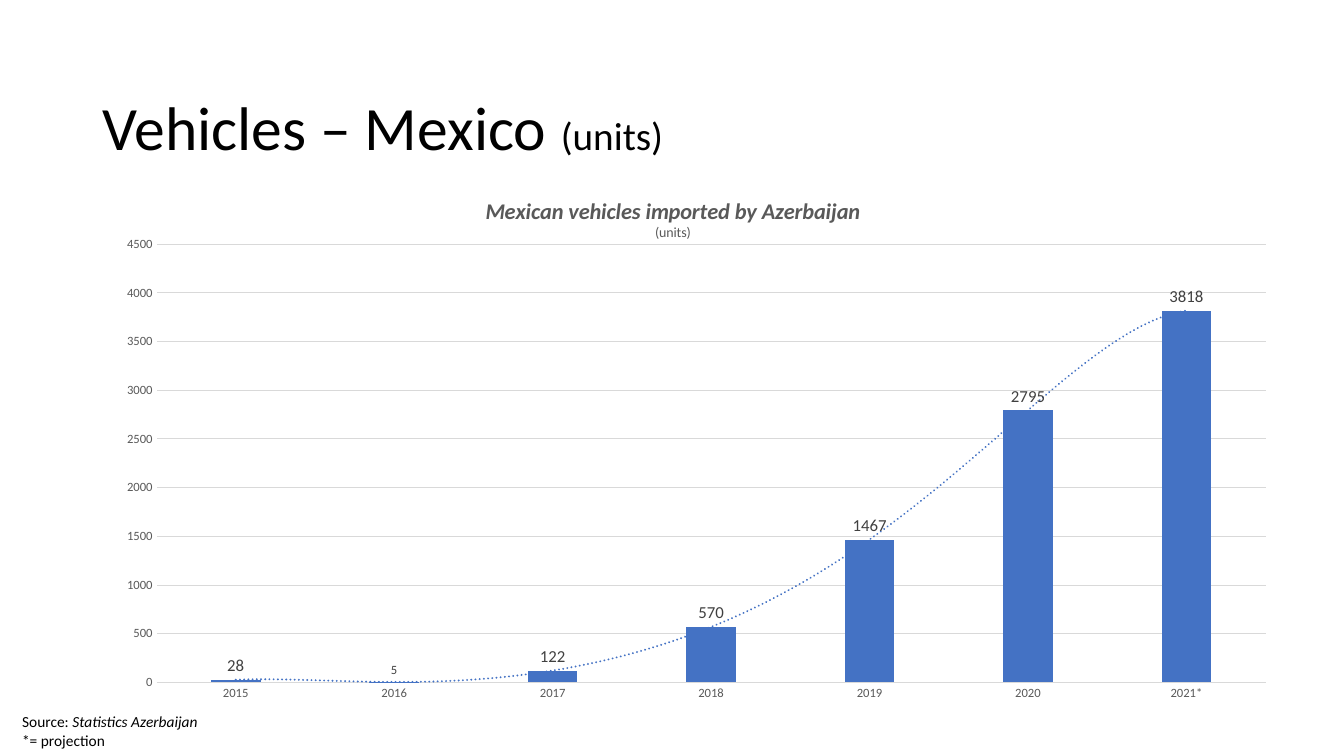
from lxml import etree
from pptx import Presentation
from pptx.chart.data import CategoryChartData
from pptx.dml.color import RGBColor
from pptx.enum.chart import XL_CHART_TYPE as ChartType, XL_LABEL_POSITION as LabelPosition
from pptx.enum.chart import XL_TICK_MARK as TickMark
from pptx.enum.text import MSO_ANCHOR as Anchor
from pptx.oxml import parse_xml
from pptx.oxml.ns import nsdecls, qn
from pptx.util import Inches, Pt

IMPORTS = {"2015": 28, "2016": 5, "2017": 122, "2018": 570,
           "2019": 1467, "2020": 2795, "2021*": 3818}


def color(hex_string):
    return RGBColor.from_string(hex_string)


def set_layout(parent, index, **values):
    """Give a chart element a manual layout, as fractions of the chart."""
    for old in parent.findall(qn("c:layout")):
        parent.remove(old)
    layout = parse_xml(f"<c:layout {nsdecls('c')}><c:manualLayout/></c:layout>")
    for tag, value in values.items():
        etree.SubElement(layout[0], qn(f"c:{tag}")).set("val", str(value))
    parent.insert(index, layout)


class SlideBuilder:
    font_name = "Calibri"
    ink, gray, label_gray, grid, blue = "000000", "595959", "404040", "D9D9D9", "4472C4"

    def __init__(self, slide):
        self.slide = slide

    def style(self, font, size, hex_color, bold=False, italic=False):
        font.name, font.size = self.font_name, Pt(size)
        font.bold, font.italic = bold, italic
        font.color.rgb = color(hex_color)

    def add_runs(self, paragraph, pieces, hex_color):
        """Add runs given as (text, size, bold, italic)."""
        for text, size, bold, italic in pieces:
            run = paragraph.add_run()
            run.text = text
            self.style(run.font, size, hex_color, bold, italic)

    def text(self, left, top, width, height, lines, anchor=Anchor.TOP, spacing=1.0):
        box = self.slide.shapes.add_textbox(
            Inches(left), Inches(top), Inches(width), Inches(height))
        frame = box.text_frame
        frame.word_wrap = True
        frame.vertical_anchor = anchor
        for number, pieces in enumerate(lines):
            paragraph = frame.add_paragraph() if number else frame.paragraphs[0]
            paragraph.line_spacing = spacing
            self.add_runs(paragraph, pieces, self.ink)

    def column_chart(self, left, top, width, height, values, title_lines):
        data = CategoryChartData()
        data.categories = list(values)
        data.add_series("Series 1", list(values.values()))
        chart = self.slide.shapes.add_chart(
            ChartType.COLUMN_CLUSTERED, Inches(left), Inches(top),
            Inches(width), Inches(height), data).chart
        self.style(chart.font, 10, self.ink)
        chart.has_legend = False
        self.chart_title(chart, title_lines)
        self.axes(chart)
        plot = chart.plots[0]
        plot.gap_width, plot.overlap, plot.vary_by_categories = 219, -27, False
        plot_area = chart._chartSpace.chart.plotArea
        set_layout(plot_area, 0, layoutTarget="inner", xMode="edge", yMode="edge",
                   x=0.092, y=0.135, w=0.878, h=0.813)
        return plot.series[0]

    def chart_title(self, chart, lines):
        frame = chart.chart_title.text_frame
        for number, pieces in enumerate(lines):
            paragraph = frame.add_paragraph() if number else frame.paragraphs[0]
            self.add_runs(paragraph, pieces, self.gray)
        set_layout(chart.chart_title._element, 1, xMode="edge", yMode="edge",
                   x=0.35, y=0.04)

    def axes(self, chart):
        category, value = chart.category_axis, chart.value_axis
        for axis in (category, value):
            axis.major_tick_mark = axis.minor_tick_mark = TickMark.NONE
            self.style(axis.tick_labels.font, 9, self.gray)
        value.minimum_scale, value.maximum_scale, value.major_unit = 0, 4500, 500
        value.format.line.fill.background()
        for line in (category.format.line, value.major_gridlines.format.line):
            line.color.rgb = color(self.grid)
            line.width = Pt(0.75)

    def label_columns(self, series, small_points):
        """Fill the columns and label them, larger outside small_points."""
        series.format.fill.solid()
        series.format.fill.fore_color.rgb = color(self.blue)
        labels = series.data_labels
        labels.show_value = True
        labels.position = LabelPosition.OUTSIDE_END
        self.style(labels.font, 9, self.label_gray)
        for number in range(len(series.values)):
            if number not in small_points:
                label = series.points[number].data_label
                self.style(label.font, 12, self.label_gray)
                label.position = LabelPosition.OUTSIDE_END

    def trend(self, series, order):
        trendline = parse_xml(
            f'<c:trendline {nsdecls("c", "a")}><c:spPr><a:ln w="{Pt(1.5)}" cap="rnd">'
            f'<a:solidFill><a:srgbClr val="{self.blue}"/></a:solidFill>'
            '<a:prstDash val="sysDot"/></a:ln></c:spPr>'
            f'<c:trendlineType val="poly"/><c:order val="{order}"/>'
            '<c:dispRSqr val="0"/><c:dispEq val="0"/></c:trendline>')
        series._element.find(qn("c:cat")).addprevious(trendline)


def main():
    presentation = Presentation()
    presentation.slide_width, presentation.slide_height = Inches(13.33), Inches(7.5)
    builder = SlideBuilder(presentation.slides.add_slide(presentation.slide_layouts[6]))
    builder.text(0.92, 0.73, 11.5, 1.12,
                 [[("Vehicles – Mexico ", 44, False, False), ("(units)", 28, False, False)]],
                 Anchor.MIDDLE, 0.9)
    columns = builder.column_chart(
        0.4, 1.7, 12.53, 5.35, IMPORTS,
        [[("Mexican vehicles imported by Azerbaijan", 16, True, True)],
         [("(units)", 10, False, False)]])
    builder.label_columns(columns, small_points={1})
    builder.trend(columns, order=6)
    builder.text(0.12, 7.02, 6.55, 0.39,
                 [[("Source: ", 11, False, False), ("Statistics Azerbaijan", 11, False, True)],
                  [("*= projection", 11, False, False)]])
    presentation.save("out.pptx")


if __name__ == "__main__":
    main()
